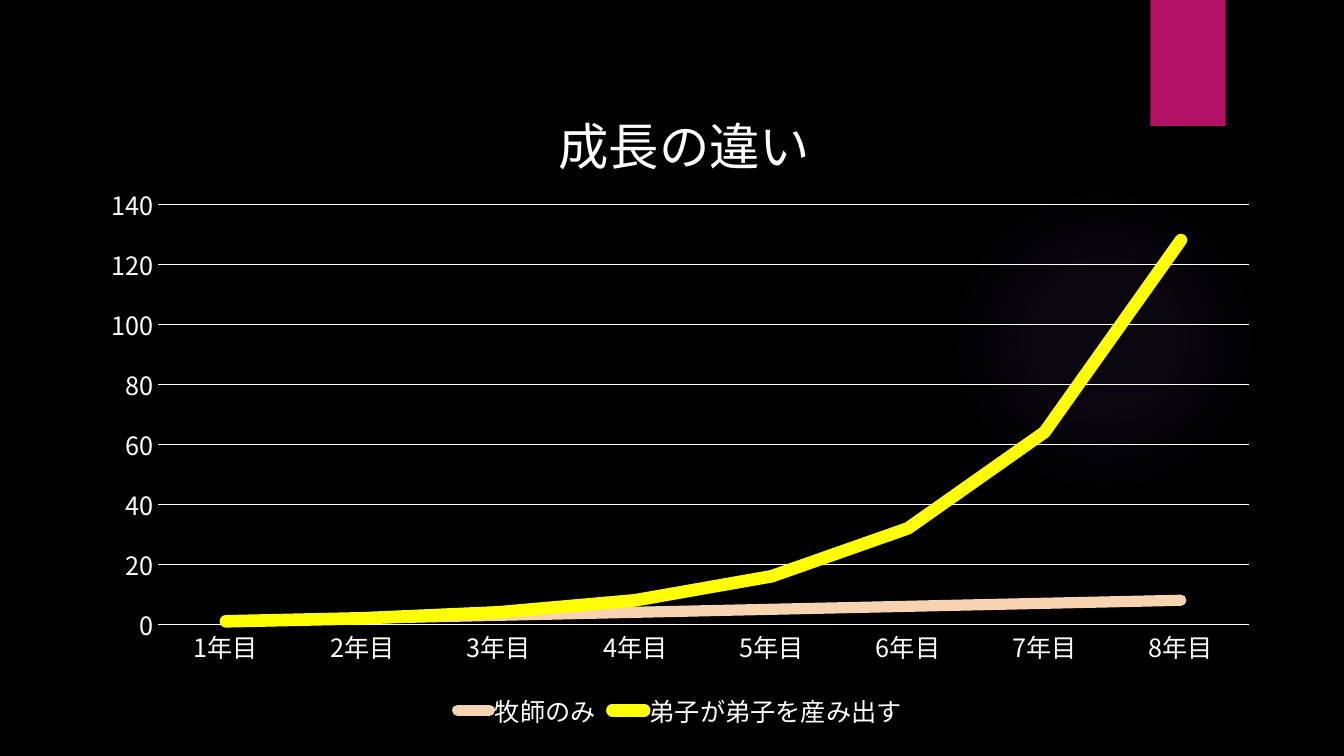
from lxml import etree
from pptx import Presentation
from pptx.chart.data import CategoryChartData
from pptx.dml.color import RGBColor
from pptx.enum.chart import XL_CHART_TYPE, XL_LEGEND_POSITION, XL_MARKER_STYLE, XL_TICK_MARK
from pptx.enum.shapes import MSO_SHAPE
from pptx.oxml import parse_xml
from pptx.oxml.ns import nsdecls, qn
from pptx.util import Cm, Pt

LINE_CHART = XL_CHART_TYPE.LINE
LEGEND_BOTTOM = XL_LEGEND_POSITION.BOTTOM
NO_MARKER = XL_MARKER_STYLE.NONE
NO_TICK = XL_TICK_MARK.NONE
OVAL = MSO_SHAPE.OVAL
RECTANGLE = MSO_SHAPE.RECTANGLE

FONT = "Noto Sans CJK JP"
COLORS = {
    "background": "000000",
    "text": "FFFFFF",
    "ribbon": "B31166",
    "glow": "9B6BF2",
    "pastor": "F6D4B0",
    "disciples": "FFFF00",
}
YEARS = range(1, 9)
GROWTH = [
    ("牧師のみ", list(YEARS), "pastor", 8),
    ("弟子が弟子を産み出す", [2 ** (year - 1) for year in YEARS], "disciples", 9),
]
GLOW_STOPS = [(0, 7), (36, 6), (69, 0)]


def color(name):
    """Return the named colour."""
    return RGBColor.from_string(COLORS[name])


def style_font(font, size):
    """Give a font the slide's typeface, size and colour."""
    font.name = FONT
    font.size = Pt(size)
    font.bold = False
    font.color.rgb = color("text")


def style_line(line, name, width):
    """Give a line a colour and a width in points."""
    line.color.rgb = color(name)
    line.width = Pt(width)


def add_plain_shape(page, kind, left, top, width, height, fill):
    """Add a filled shape with no outline and no shadow."""
    shape = page.shapes.add_shape(kind, Cm(left), Cm(top), Cm(width), Cm(height))
    shape.shadow.inherit = False
    shape.fill.solid()
    shape.fill.fore_color.rgb = color(fill)
    shape.line.fill.background()
    return shape


def add_glow(page):
    """Add the faint round glow that fades outwards."""
    glow = add_plain_shape(page, OVAL, 23.9, 4.65, 7.82, 7.82, "glow")
    stops = "".join(
        f'<a:gs pos="{place * 1000}"><a:srgbClr val="{COLORS["glow"]}">'
        f'<a:alpha val="{alpha * 1000}"/></a:srgbClr></a:gs>'
        for place, alpha in GLOW_STOPS
    )
    gradient = parse_xml(
        f'<a:gradFill {nsdecls("a")}><a:gsLst>{stops}</a:gsLst><a:path path="circle">'
        '<a:fillToRect l="50000" t="50000" r="50000" b="50000"/></a:path></a:gradFill>'
    )
    solid = glow._element.spPr.find(qn("a:solidFill"))
    solid.getparent().replace(solid, gradient)


def place_part(part, index, **fractions):
    """Place a chart part by fractions of the chart's size."""
    for old in part.findall(qn("c:layout")):
        part.remove(old)
    layout = etree.Element(qn("c:layout"))
    manual = etree.SubElement(layout, qn("c:manualLayout"))
    if "w" in fractions:
        etree.SubElement(manual, qn("c:layoutTarget")).set("val", "inner")
    for mode in ("xMode", "yMode"):
        etree.SubElement(manual, qn(f"c:{mode}")).set("val", "edge")
    for key, value in fractions.items():
        etree.SubElement(manual, qn(f"c:{key}")).set("val", str(value))
    part.insert(index, layout)


def style_axes(chart):
    """Format both axes and the gridlines."""
    for axis in (chart.category_axis, chart.value_axis):
        axis.major_tick_mark = NO_TICK
        axis.minor_tick_mark = NO_TICK
        style_font(axis.tick_labels.font, 18)
    style_line(chart.category_axis.format.line, "text", 0.75)
    values = chart.value_axis
    values.minimum_scale, values.maximum_scale, values.major_unit = 0, 140, 20
    values.format.line.fill.background()
    values.has_major_gridlines = True
    style_line(values.major_gridlines.format.line, "text", 0.75)


def style_series(chart):
    """Draw each series as a thick line with round ends."""
    for series, (_, _, name, width) in zip(chart.plots[0].series, GROWTH):
        series.smooth = False
        series.marker.style = NO_MARKER
        line = series.format.line
        style_line(line, name, width)
        outline = series._element.spPr.find(qn("a:ln"))
        outline.set("cap", "rnd")
        etree.SubElement(outline, qn("a:round"))


def add_title(chart, text):
    """Give the chart its title."""
    chart.has_title = True
    title = chart.chart_title
    para = title.text_frame.paragraphs[0]
    span = para.add_run()
    span.text = text
    style_font(span.font, 36)
    title.include_in_layout = False
    place_part(title._element, 1, x=0.39, y=0.06)


def add_legend(chart):
    """Add the legend below the plot."""
    chart.has_legend = True
    chart.legend.position = LEGEND_BOTTOM
    chart.legend.include_in_layout = False
    style_font(chart.legend.font, 18)


def add_growth_chart(page):
    """Add the line chart comparing the two kinds of growth."""
    data = CategoryChartData()
    data.categories = [f"{year}年目" for year in YEARS]
    for label, values, _, _ in GROWTH:
        data.add_series(label, values)
    frame = page.shapes.add_chart(
        LINE_CHART, Cm(2.18), Cm(1.27), Cm(29.9), Cm(17.22), data
    )
    chart = frame.chart
    style_font(chart.font, 18)
    chart.plots[0].vary_by_categories = False
    style_axes(chart)
    style_series(chart)
    add_title(chart, "成長の違い")
    add_legend(chart)
    plot_area = chart._chartSpace.chart.plotArea
    place_part(plot_area, 0, x=0.06, y=0.225, w=0.92, h=0.615)
    for latin in list(chart._chartSpace.iter(qn("a:latin"))):
        east_asian = etree.Element(qn("a:ea"))
        east_asian.set("typeface", FONT)
        latin.addnext(east_asian)


def main():
    """Build the slide and save it."""
    deck = Presentation()
    deck.slide_width, deck.slide_height = Cm(33.87), Cm(19.05)
    page = deck.slides.add_slide(deck.slide_layouts.get_by_name("Blank"))
    page.background.fill.solid()
    page.background.fill.fore_color.rgb = color("background")
    add_glow(page)
    add_plain_shape(page, RECTANGLE, 28.99, 0, 1.9, 3.18, "ribbon")
    add_growth_chart(page)
    deck.save("out.pptx")


if __name__ == "__main__":
    main()
